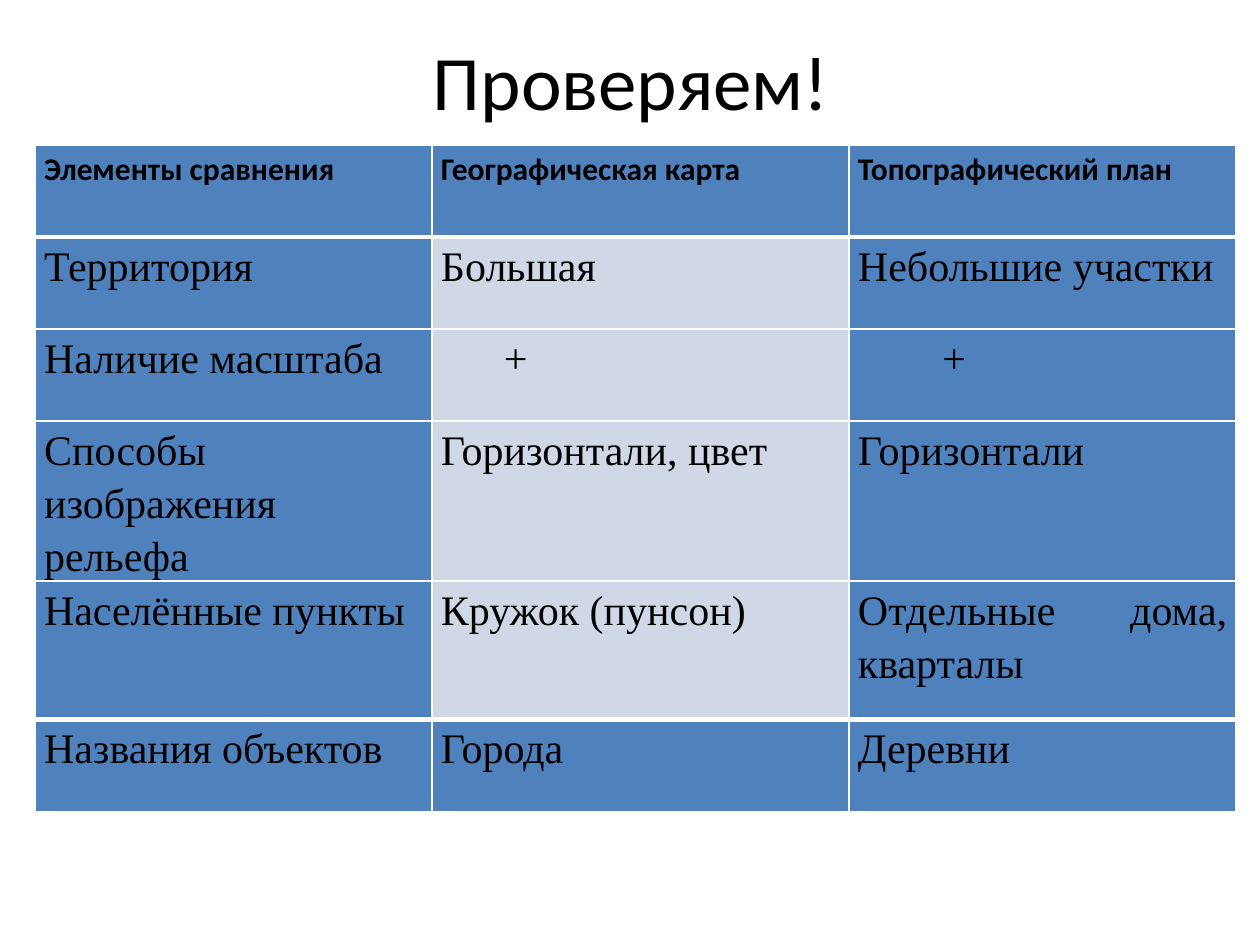
from lxml import etree
from pptx import Presentation
from pptx import util as u
from pptx.dml import color
from pptx.enum import text
from pptx.oxml import ns

BLACK = color.RGBColor(0x00, 0x00, 0x00)
WHITE = color.RGBColor(0xFF, 0xFF, 0xFF)
BLUE = color.RGBColor(0x4F, 0x81, 0xBD)
PALE = color.RGBColor(0xD0, 0xD8, 0xE8)

TITLE_FONT = {"name": "Calibri", "size": u.Pt(44), "bold": False}
HEAD_FONT = {"name": "Calibri", "size": u.Pt(18), "bold": True}
BODY_FONT = {"name": "Times New Roman", "size": u.Pt(24), "bold": False}

ROWS = [
    ["Элементы сравнения", "Географическая карта", "Топографический план"],
    ["Территория", "Большая", "Небольшие участки"],
    ["Наличие масштаба", "+", "+"],
    ["Способы изображения рельефа", "Горизонтали, цвет", "Горизонтали"],
    ["Населённые пункты", "Кружок (пунсон)", "Отдельные дома, кварталы"],
    ["Названия объектов", "Города", "Деревни"],
]
COLUMN_WIDTHS = [3.15, 3.31, 3.07]
ROW_HEIGHTS = [0.73, 0.73, 0.73, 1.1, 1.1, 0.73]
PLUS_INDENTS = {1: 0.5, 2: 0.67}
LAST = len(ROWS) - 1
HEAVY_RULES = {1, LAST}  # under the header and above the last row


def set_format(target, values):
    for name, value in values.items():
        setattr(target, name, value)


def write(para, wording, font):
    span = para.add_run()
    span.text = wording
    set_format(span.font, font)
    span.font.color.rgb = BLACK


def add_title(page, box):
    frame = page.shapes.add_textbox(*box).text_frame
    set_format(frame, {"word_wrap": True, "vertical_anchor": text.MSO_ANCHOR.MIDDLE})
    para = frame.paragraphs[0]
    para.alignment = text.PP_ALIGN.CENTER
    write(para, "Проверяем!", TITLE_FONT)


def add_borders(cell, row):
    top = 3 if row in HEAVY_RULES else 1
    bottom = 3 if row + 1 in HEAVY_RULES else 1
    properties = cell._tc.get_or_add_tcPr()
    for side, points in (("L", 1), ("R", 1), ("T", top), ("B", bottom)):
        line = etree.SubElement(properties, ns.qn(f"a:ln{side}"), w=str(u.Pt(points)))
        fill = etree.SubElement(line, ns.qn("a:solidFill"))
        etree.SubElement(fill, ns.qn("a:srgbClr"), val=str(WHITE))


def fill_cell(cell, row, column):
    wording = ROWS[row][column]
    set_format(cell, {"margin_left": u.Inches(0.07), "margin_right": u.Inches(0.07),
                      "margin_top": 0, "margin_bottom": 0})
    add_borders(cell, row)
    cell.fill.solid()
    cell.fill.fore_color.rgb = PALE if column == 1 and 0 < row < LAST else BLUE
    para = cell.text_frame.paragraphs[0]
    set_format(para, {"alignment": text.PP_ALIGN.JUSTIFY, "line_spacing": 1.15})
    if wording == "+":
        para._p.get_or_add_pPr().set("marL", str(u.Inches(PLUS_INDENTS[column])))
    write(para, wording, BODY_FONT if row else HEAD_FONT)


def add_comparison(page, box):
    table = page.shapes.add_table(len(ROWS), len(COLUMN_WIDTHS), *box).table
    for column, width in zip(table.columns, COLUMN_WIDTHS):
        column.width = u.Inches(width)
    for line, height in zip(table.rows, ROW_HEIGHTS):
        line.height = u.Inches(height)
    for row in range(len(ROWS)):
        for column in range(len(COLUMN_WIDTHS)):
            fill_cell(table.cell(row, column), row, column)


def main():
    deck = Presentation()
    set_format(deck, {"slide_width": u.Inches(10), "slide_height": u.Inches(7.5)})
    page = deck.slides.add_slide(deck.slide_layouts[6])
    # Comparison table
    add_comparison(page, [u.Inches(n) for n in (0.28, 1.15, 9.53, 5.12)])
    # Title
    add_title(page, [u.Inches(n) for n in (0.51, 0.01, 9, 1.25)])
    deck.save("out.pptx")


if __name__ == "__main__":
    main()
